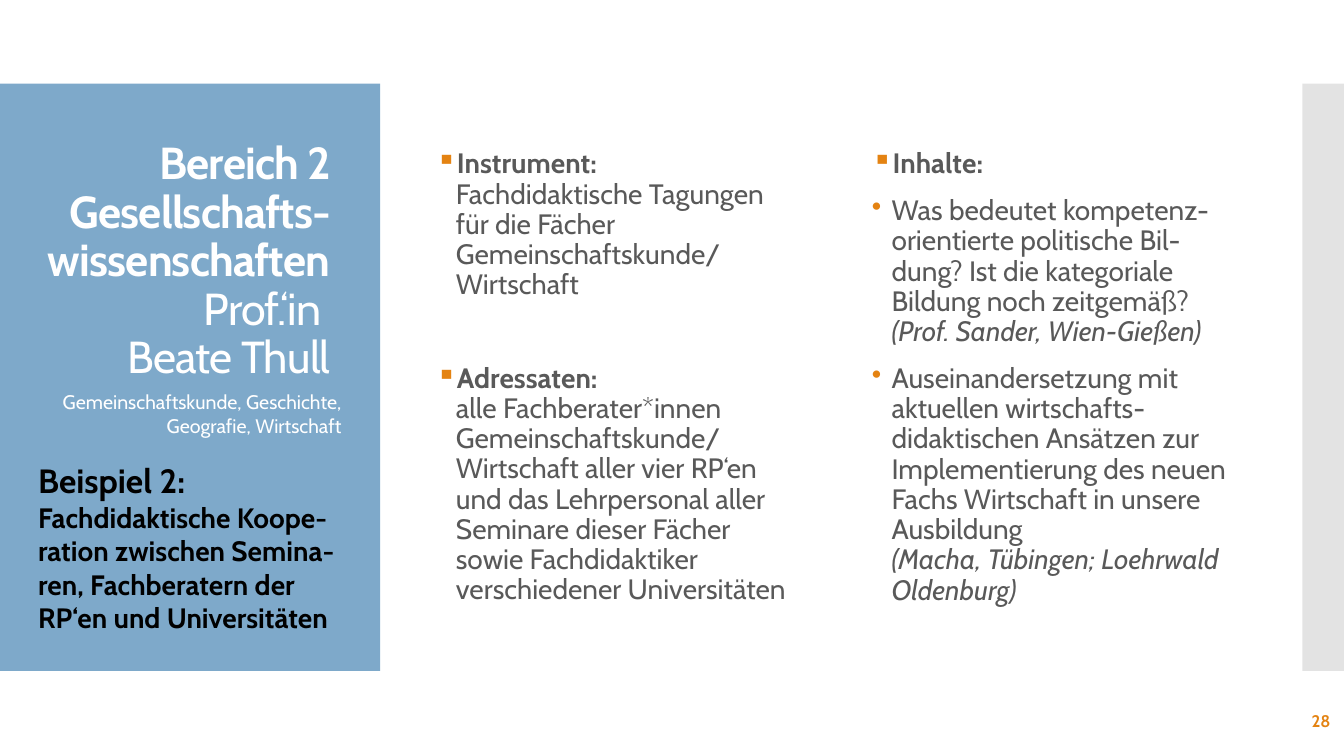
from dataclasses import dataclass

from lxml import etree
from pptx import Presentation
from pptx.dml import color
from pptx.enum import shapes, text
from pptx.oxml import ns
from pptx import util as u

FONT = "Cabin"
COLORS = {
    "blue": "7EA9CA",
    "gray": "C8C8C8",
    "orange": "E48312",
    "body": "595959",
    "white": "FFFFFF",
    "black": "000000",
}
LEFT, RIGHT = text.PP_ALIGN.LEFT, text.PP_ALIGN.RIGHT
TOP, MIDDLE, BOTTOM = (text.MSO_ANCHOR.TOP, text.MSO_ANCHOR.MIDDLE,
                       text.MSO_ANCHOR.BOTTOM)


@dataclass
class Style:
    size: float
    color: str
    bold: bool = False
    italic: bool = False
    spacing: int = 0  # hundredths of a point


@dataclass
class Para:
    """Lines split by a vertical tab take one style each."""
    text: str
    styles: list[Style]
    bullet: str = ""
    before: float = 0


@dataclass
class Box:
    left: float
    top: float
    width: float
    height: float
    paras: list[Para]
    align: int = LEFT
    anchor: int = TOP
    line_spacing: float = 1.0


@dataclass
class Panel:
    left: float
    top: float
    width: float
    height: float
    color: str
    alpha: int = 100


def rgb(name: str) -> color.RGBColor:
    return color.RGBColor.from_string(COLORS[name])


def add_panel(slide, panel: Panel) -> None:
    sp = slide.shapes.add_shape(
        shapes.MSO_SHAPE.RECTANGLE, u.Cm(panel.left), u.Cm(panel.top),
        u.Cm(panel.width), u.Cm(panel.height))
    sp.shadow.inherit = False
    sp.line.fill.background()
    sp.fill.solid()
    sp.fill.fore_color.rgb = rgb(panel.color)
    if panel.alpha < 100:
        clr = sp._element.spPr.find(".//" + ns.qn("a:srgbClr"))
        etree.SubElement(clr, ns.qn("a:alpha"), val=str(panel.alpha * 1000))


def add_bullet(p, char: str) -> None:
    pPr = p._p.get_or_add_pPr()
    pPr.set("marL", str(u.Cm(0.5)))
    pPr.set("indent", str(-u.Cm(0.5)))
    clr = etree.SubElement(pPr, ns.qn("a:buClr"))
    etree.SubElement(clr, ns.qn("a:srgbClr"), val=COLORS["orange"])
    etree.SubElement(pPr, ns.qn("a:buChar"), char=char)


def style_run(r, style: Style) -> None:
    r.font.name = FONT
    r.font.size = u.Pt(style.size)
    r.font.bold = style.bold
    r.font.italic = style.italic
    r.font.color.rgb = rgb(style.color)
    if style.spacing:
        r._r.get_or_add_rPr().set("spc", str(style.spacing))


def add_box(slide, box: Box) -> None:
    sp = slide.shapes.add_textbox(u.Cm(box.left), u.Cm(box.top),
                                  u.Cm(box.width), u.Cm(box.height))
    tf = sp.text_frame
    tf.word_wrap = True
    tf.vertical_anchor = box.anchor
    for i, para in enumerate(box.paras):
        p = tf.add_paragraph() if i else tf.paragraphs[0]
        p.text = para.text
        if para.bullet:
            add_bullet(p, para.bullet)
        p.alignment = box.align
        p.line_spacing = box.line_spacing
        if para.before:
            p.space_before = u.Pt(para.before)
        for r, style in zip(p.runs, para.styles):
            style_run(r, style)


# Text styles
TITLE_BOLD = Style(32, "white", bold=True, spacing=-60)
TITLE = Style(32, "white", spacing=-60)
SUBJECTS = Style(14, "white")
EXAMPLE_HEAD = Style(24, "black", bold=True)
EXAMPLE = Style(20, "black", bold=True)
HEAD = Style(20, "body", bold=True)
BODY = Style(20, "body")
SOURCE = Style(20, "body", italic=True)
NUMBER = Style(12, "orange", bold=True)

PANELS = [
    Panel(0, 2.11, 9.58, 14.8, "blue"),
    Panel(32.82, 2.11, 1.05, 14.8, "gray", alpha=50),
]

# Texts on the blue panel and the slide number
SIDE_BOXES = [
    Box(0.71, 3.18, 7.87, 6.6, [
        Para("Bereich 2 Gesellschafts-wissenschaften\vProf.‘in ",
             [TITLE_BOLD, TITLE]),
        Para("Beate Thull", [TITLE]),
    ], RIGHT, BOTTOM, 0.9),
    Box(0.71, 9.7, 8.15, 1.6, [
        Para("Gemeinschaftskunde, Geschichte, Geografie, Wirtschaft",
             [SUBJECTS]),
    ], RIGHT),
    Box(0.71, 11.46, 8.43, 4.7, [
        Para("Beispiel 2:\vFachdidaktische Koope-ration zwischen "
             "Semina-ren, Fachberatern der RP‘en und Universitäten",
             [EXAMPLE_HEAD, EXAMPLE]),
    ]),
    Box(29.54, 17.65, 4.24, 1.02, [Para("28", [NUMBER])], RIGHT, MIDDLE),
]

# Bulleted columns
COLUMNS = [
    [
        Para("Instrument:\vFachdidaktische Tagungen für die Fächer "
             "Gemeinschaftskunde/ Wirtschaft", [HEAD, BODY], "▪"),
        Para("Adressaten:\valle Fachberater*innen Gemeinschaftskunde/ "
             "Wirtschaft aller vier RP‘en und das Lehrpersonal aller "
             "Seminare dieser Fächer sowie Fachdidaktiker verschiedener "
             "Universitäten", [HEAD, BODY], "▪", before=45),
    ],
    [
        Para("Inhalte:", [HEAD], "▪"),
        Para("Was bedeutet kompetenz-orientierte politische Bil-dung? Ist "
             "die kategoriale Bildung noch zeitgemäß?\v"
             "(Prof. Sander, Wien-Gießen)", [BODY, SOURCE], "•", before=12),
        Para("Auseinandersetzung mit aktuellen wirtschafts-didaktischen "
             "Ansätzen zur Implementierung des neuen Fachs Wirtschaft in "
             "unsere Ausbildung\v(Macha, Tübingen; Loehrwald Oldenburg)",
             [BODY, SOURCE], "•", before=12),
    ],
]
COLUMN_LEFT, COLUMN_STEP = 10.74, 10.98


def main() -> None:
    prs = Presentation()
    prs.slide_width, prs.slide_height = u.Cm(33.87), u.Cm(19.05)
    slide = prs.slides.add_slide(prs.slide_layouts[6])
    for panel in PANELS:
        add_panel(slide, panel)
    for box in SIDE_BOXES:
        add_box(slide, box)
    for i, paras in enumerate(COLUMNS):
        add_box(slide, Box(COLUMN_LEFT + i * COLUMN_STEP, 2.41, 9.65, 14.22,
                           paras, anchor=MIDDLE, line_spacing=0.9))
    prs.save("out.pptx")


if __name__ == "__main__":
    main()
